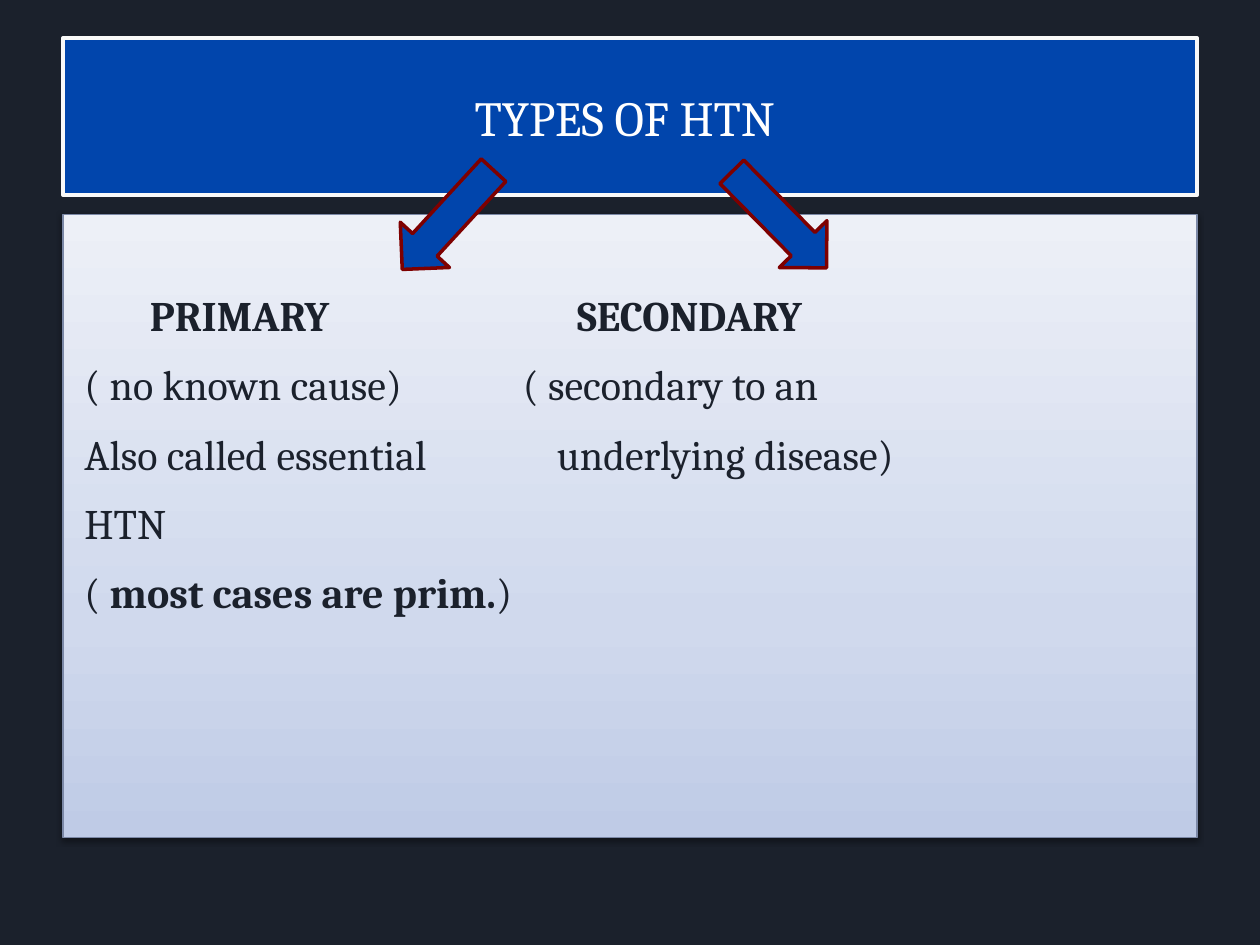
from copy import deepcopy

from lxml import etree
from pptx import Presentation
from pptx.dml.color import RGBColor
from pptx.enum.shapes import MSO_SHAPE
from pptx.enum.text import MSO_ANCHOR, MSO_AUTO_SIZE, PP_ALIGN
from pptx.oxml.ns import qn
from pptx.util import Inches, Pt

DOWN_ARROW = MSO_SHAPE.DOWN_ARROW
CENTER, LEFT = PP_ALIGN.CENTER, PP_ALIGN.LEFT
MIDDLE, TOP = MSO_ANCHOR.MIDDLE, MSO_ANCHOR.TOP
NO_AUTOFIT = MSO_AUTO_SIZE.NONE

WIDTH, HEIGHT = 10, 7.5
FONT = "Cambria"
DARK, BLUE, WHITE = "1B212C", "0145AC", "FFFFFF"
FRAME, BODY_LINE, ARROW_LINE = "F9F9F9", "7B88A6", "7E0000"
BODY_STOPS = [(0, "BFCBE6"), (0.35, "D0D9ED"), (1, "EDF0F7")]

# Each line is its indent in inches and a list of (text, bold) runs
PRIMARY_LINES = [
    (0.52, [("PRIMARY", True)]),
    (0, [("( no known cause)", False)]),
    (0, [("Also called essential", False)]),
    (0, [("HTN", False)]),
    (0, [("( ", False), ("most cases are prim.", True), (")", False)]),
]
SECONDARY_LINES = [
    (0.43, [("SECONDARY", True)]),
    (0, [("( secondary to an", False)]),
    (0.27, [("underlying disease)", False)]),
]


def color(hex_text):
    return RGBColor.from_string(hex_text)


def add_text(paragraph, text, size=24, bold=False, fill=DARK):
    run = paragraph.add_run()
    run.text = text
    run.font.name = FONT
    run.font.size = Pt(size)
    run.font.bold = bold
    run.font.color.rgb = color(fill)


class SlideBuilder:
    """Holds the shared style and the current slide."""

    def __init__(self, presentation):
        self.slide = presentation.slides.add_slide(presentation.slide_layouts[1])
        background = self.slide.background.fill
        background.solid()
        background.fore_color.rgb = color(DARK)

    def place(self, shape, left, top, width, height):
        shape.left, shape.top = Inches(left), Inches(top)
        shape.width, shape.height = Inches(width), Inches(height)

    def outline(self, shape, line, width):
        shape.line.color.rgb = color(line)
        shape.line.width = Pt(width)

    def paint(self, shape, fill, line, width):
        shape.fill.solid()
        shape.fill.fore_color.rgb = color(fill)
        self.outline(shape, line, width)

    def gradient(self, shape, stops, angle):
        shape.fill.gradient()
        shape.fill.gradient_angle = angle
        first = shape._element.spPr.find(".//" + qn("a:gs"))
        first.addnext(deepcopy(first))
        for stop, (position, hex_text) in zip(shape.fill.gradient_stops, stops):
            stop.color.rgb = color(hex_text)
            stop.position = position

    def shadow(self, shape, blur, distance, opacity):
        effects = etree.SubElement(shape._element.spPr, qn("a:effectLst"))
        outer = etree.SubElement(effects, qn("a:outerShdw"), blurRad=str(Pt(blur)),
                                 dist=str(Pt(distance)), dir="5400000", rotWithShape="0")
        black = etree.SubElement(outer, qn("a:srgbClr"), val="000000")
        etree.SubElement(black, qn("a:alpha"), val=str(opacity * 1000))

    def frame(self, shape, anchor, left=0.1, top=0.05):
        frame = shape.text_frame
        frame.word_wrap = True
        frame.auto_size = NO_AUTOFIT
        frame.vertical_anchor = anchor
        frame.margin_left, frame.margin_right = Inches(left), Inches(0.1)
        frame.margin_top, frame.margin_bottom = Inches(top), Inches(0.05)
        return frame

    def title(self, text, *box):
        shape = self.slide.shapes.title
        self.place(shape, *box)
        self.paint(shape, BLUE, FRAME, 2)
        paragraph = self.frame(shape, MIDDLE).paragraphs[0]
        paragraph.alignment = CENTER
        add_text(paragraph, text, size=28, fill=WHITE)

    def body(self, lines, *box):
        shape = self.slide.placeholders[1]
        self.place(shape, *box)
        self.gradient(shape, BODY_STOPS, 90)
        self.outline(shape, BODY_LINE, 0.75)
        self.shadow(shape, 3.1, 1.6, 38)
        self.write_lines(shape, lines)

    def column(self, lines, *box):
        shape = self.slide.shapes.add_textbox(*[Inches(length) for length in box])
        self.write_lines(shape, lines)

    def write_lines(self, shape, lines):
        frame = self.frame(shape, TOP, left=0.17, top=0.54)
        for index, (indent, runs) in enumerate(lines):
            paragraph = frame.add_paragraph() if index else frame.paragraphs[0]
            properties = paragraph._p.get_or_add_pPr()
            properties.set("marL", str(Inches(indent)))
            properties.set("indent", "0")
            etree.SubElement(properties, qn("a:buNone"))
            paragraph.alignment = LEFT
            paragraph.line_spacing = 1.15
            paragraph.space_before = Pt(6.4 if index else 0)
            for text, bold in runs:
                add_text(paragraph, text, bold=bold)

    def arrow(self, left, top, width, height, rotation):
        shape = self.slide.shapes.add_shape(
            DOWN_ARROW, Inches(left), Inches(top), Inches(width), Inches(height))
        shape.shadow.inherit = False
        shape.rotation = rotation
        self.paint(shape, BLUE, ARROW_LINE, 2)


def main():
    presentation = Presentation()
    presentation.slide_width, presentation.slide_height = Inches(WIDTH), Inches(HEIGHT)
    builder = SlideBuilder(presentation)

    # Title band and text panel share the side margins
    margin = WIDTH * 0.05
    content_width = WIDTH - 2 * margin
    builder.title("TYPES OF HTN ", margin, 0.3, content_width, 1.25)
    builder.body(PRIMARY_LINES, margin, 1.7, content_width, 4.95)

    # Second column on the panel
    column_left = 3.98
    builder.column(SECONDARY_LINES, column_left, 1.7, WIDTH - margin - column_left, 4.95)

    # Arrows from the title to the two types
    for left, rotation in [(3.29, 42.6), (5.92, 315.4)]:
        builder.arrow(left, 1.21, 0.53, 1.07, rotation)

    presentation.save("out.pptx")


if __name__ == "__main__":
    main()
